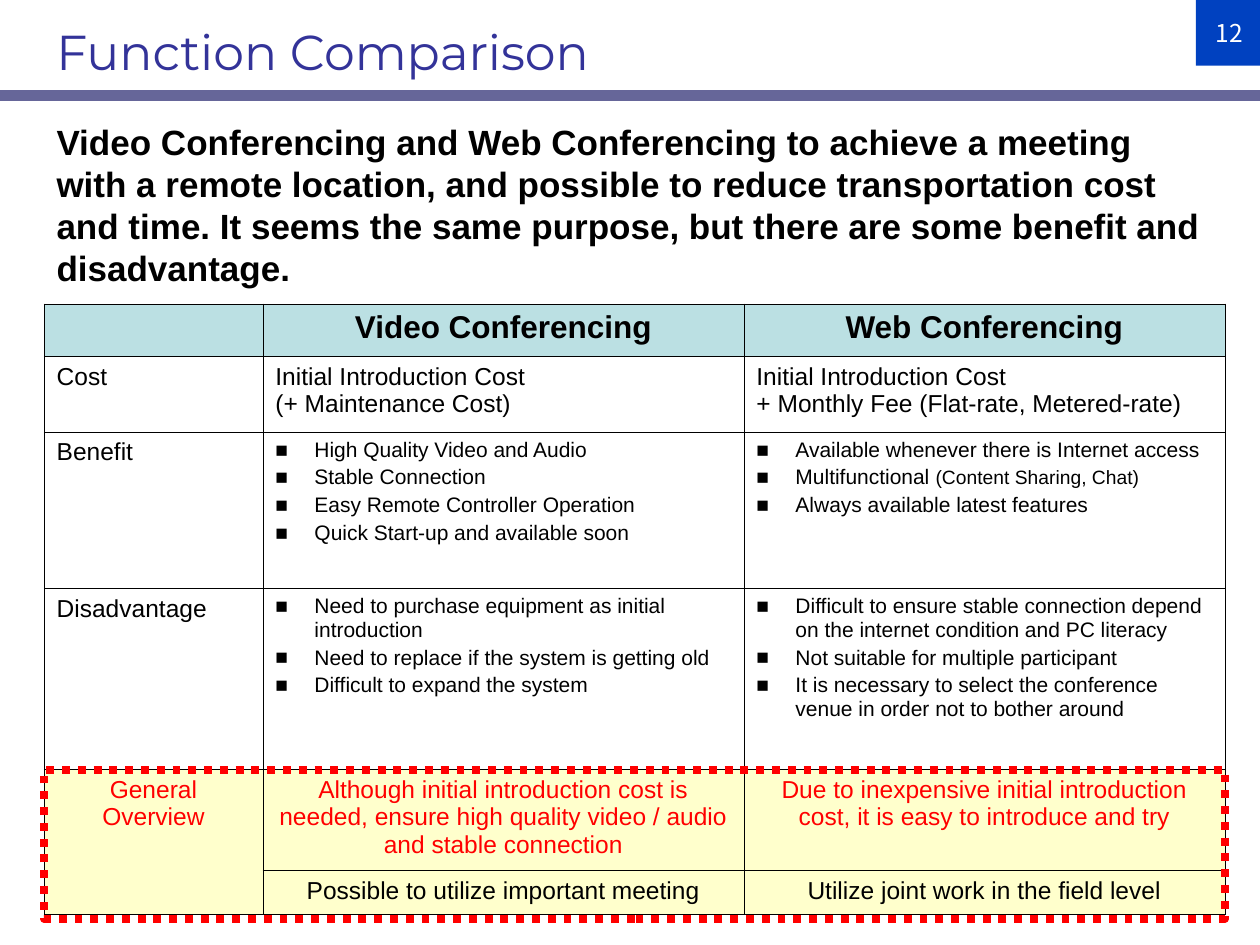
from pptx import Presentation
from pptx.dml.color import RGBColor
from pptx.enum.dml import MSO_LINE_DASH_STYLE as Dash
from pptx.enum.shapes import MSO_CONNECTOR as Connector, MSO_SHAPE as Shape
from pptx.enum.text import MSO_ANCHOR as Anchor, PP_ALIGN as Align
from pptx.oxml.ns import qn
from pptx.util import Pt
from lxml.etree import SubElement

BLACK, RED, WHITE = "000000", "FF0000", "FFFFFF"
HEADER, OVERVIEW = "BBE0E3", "FFFFCC"
LEFT, WIDTH = 25.2, 674.8

VIDEO_BENEFITS = ["High Quality Video and Audio", "Stable Connection",
                  "Easy Remote Controller Operation",
                  "Quick Start-up and available soon"]
WEB_BENEFITS = ["Available whenever there is Internet access",
                ("Multifunctional ", "(Content Sharing, Chat)"),
                "Always available latest features"]
VIDEO_DRAWBACKS = ["Need to purchase equipment as initial introduction",
                   "Need to replace if the system is getting old",
                   "Difficult to expand the system"]
WEB_DRAWBACKS = ["Difficult to ensure stable connection depend on the internet "
                 "condition and PC literacy",
                 "Not suitable for multiple participant",
                 "It is necessary to select the conference venue in order not "
                 "to bother around"]

# Each row: height, fill, text format, cells (a list is a bulleted cell)
ROWS = [
    (30.2, HEADER, dict(size=18, bold=True, align=Align.CENTER),
     ["", "Video Conferencing", "Web Conferencing"]),
    (43, None, {},
     ["Cost", "Initial Introduction Cost\n(+ Maintenance Cost)",
      "Initial Introduction Cost\n+ Monthly Fee (Flat-rate, Metered-rate)"]),
    (89.5, None, {}, ["Benefit", VIDEO_BENEFITS, WEB_BENEFITS]),
    (103.5, None, {}, ["Disadvantage", VIDEO_DRAWBACKS, WEB_DRAWBACKS]),
    (57.6, OVERVIEW, dict(color=RED, align=Align.CENTER),
     ["General Overview",
      "Although initial introduction cost is needed, ensure high quality "
      "video / audio and stable connection",
      "Due to inexpensive initial introduction cost, it is easy to introduce "
      "and try"]),
    (25.2, OVERVIEW, dict(align=Align.CENTER),
     ["", "Possible to utilize important meeting",
      "Utilize joint work in the field level"]),
]


def rgb(code):
    return RGBColor.from_string(code)


def write(para, text, size=14, color=BLACK, font="Arial", bold=False,
          align=Align.LEFT, before=0.0):
    """Add text to a paragraph; before is a share of the line height."""
    para.alignment = align
    if before:
        spacing = SubElement(para._p.get_or_add_pPr(), qn("a:spcBef"))
        SubElement(spacing, qn("a:spcPct"), val=str(round(before * 100000)))
    for index, line in enumerate(text.split("\n")):
        if index:
            para.add_line_break()
        span = para.add_run()
        span.text = line
        span.font.name = font
        span.font.size = Pt(size)
        span.font.bold = bold
        span.font.color.rgb = rgb(color)


def add_text(page, left, top, width, height, text, **style):
    box = page.shapes.add_textbox(Pt(left), Pt(top), Pt(width), Pt(height))
    box.text_frame.word_wrap = True
    write(box.text_frame.paragraphs[0], text, **style)


def add_rect(page, left, top, width, height, fill=None, line=None):
    box = page.shapes.add_shape(Shape.RECTANGLE, Pt(left), Pt(top),
                                Pt(width), Pt(height))
    box.shadow.inherit = False
    if fill:
        box.fill.solid()
        box.fill.fore_color.rgb = rgb(fill)
    else:
        box.fill.background()
    if line:
        box.line.color.rgb = rgb(line)
    else:
        box.line.fill.background()
    return box


def add_rule(page, top, width, color, weight):
    rule = page.shapes.add_connector(Connector.STRAIGHT, 0, Pt(top),
                                     Pt(width), Pt(top))
    rule.line.color.rgb = rgb(color)
    rule.line.width = Pt(weight)
    SubElement(rule._element.spPr, qn("a:effectLst"))


def write_bullets(frame, items):
    for index, item in enumerate(items):
        para = frame.add_paragraph() if index else frame.paragraphs[0]
        main_text, *notes = [item] if isinstance(item, str) else item
        write(para, main_text, size=12, before=0.2)
        for note in notes:
            write(para, note, size=11)
        props = para._p.get_or_add_pPr()
        props.set("marL", str(Pt(22.3)))
        props.set("indent", str(-Pt(22.3)))
        SubElement(props, qn("a:buFont"), typeface="Arial")
        SubElement(props, qn("a:buChar"), char="■")


def format_cell(cell, fill):
    """Draw thin black borders, then set the fill that follows them."""
    props = cell._tc.get_or_add_tcPr()
    for side in ("lnL", "lnR", "lnT", "lnB"):
        border = SubElement(props, qn(f"a:{side}"), w=str(Pt(0.25)))
        paint = SubElement(border, qn("a:solidFill"))
        SubElement(paint, qn("a:srgbClr"), val=BLACK)
    if fill:
        cell.fill.solid()
        cell.fill.fore_color.rgb = rgb(fill)
    else:
        cell.fill.background()


def add_comparison(page):
    height = sum(row[0] for row in ROWS)
    table = page.shapes.add_table(len(ROWS), 3, Pt(LEFT), Pt(173.6),
                                  Pt(WIDTH), Pt(height)).table
    table.first_row = table.horz_banding = False
    for column, width in zip(table.columns, (125, 274.9, 274.9)):
        column.width = Pt(width)
    for r, (height, fill, style, contents) in enumerate(ROWS):
        table.rows[r].height = Pt(height)
        for c, content in enumerate(contents):
            cell = table.cell(r, c)
            format_cell(cell, fill)
            if isinstance(content, list):
                write_bullets(cell.text_frame, content)
            elif content:
                write(cell.text_frame.paragraphs[0], content, before=0.2,
                      **style)
    table.cell(4, 0).merge(table.cell(5, 0))


def main():
    deck = Presentation()
    deck.slide_width, deck.slide_height = Pt(720), Pt(540)
    page = deck.slides.add_slide(deck.slide_layouts[6])

    # Page number and rule under the title
    badge = add_rect(page, 683.3, 0, 38, 37.5, fill="0041C0")
    badge.text_frame.word_wrap = False
    badge.text_frame.vertical_anchor = Anchor.MIDDLE
    write(badge.text_frame.paragraphs[0], "12", color=WHITE,
          font="Noto Sans CJK JP", align=Align.CENTER)
    add_rule(page, 54.7, 720, "666699", 6)

    # Introduction
    add_text(page, LEFT, 65.5, WIDTH, 104.4,
             "Video Conferencing and Web Conferencing to achieve a meeting "
             "with a remote location, and possible to reduce transportation "
             "cost and time. It seems the same purpose, but there are some "
             "benefit and disadvantage.", size=20, bold=True)

    # Table, with a dotted frame around the overview
    add_comparison(page)
    frame = add_rect(page, LEFT, 440, WIDTH, 85, line=RED)
    frame.line.width = Pt(4.5)
    frame.line.dash_style = Dash.ROUND_DOT

    # Title
    add_text(page, LEFT, 8.6, 657.4, 41, "Function Comparison", size=28,
             color="333399", font="Montserrat", before=0.5)

    deck.save("out.pptx")


if __name__ == "__main__":
    main()
